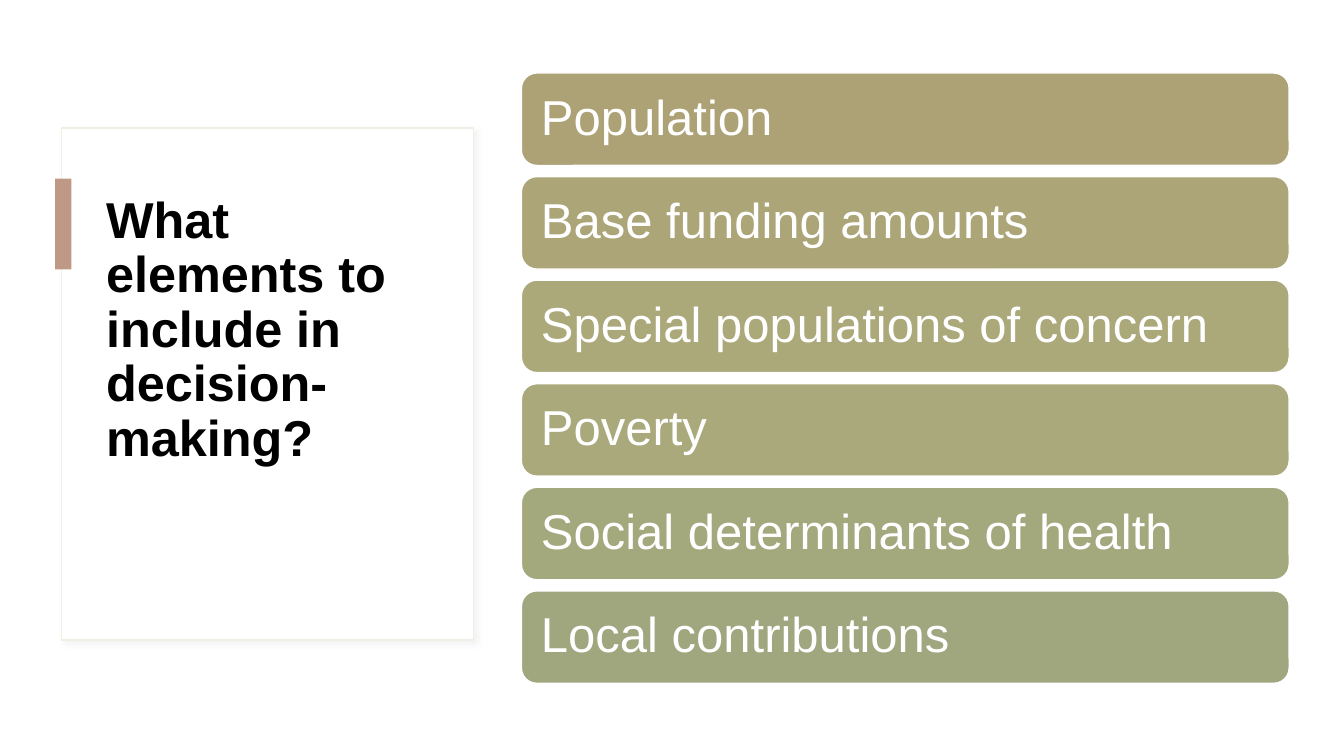
from dataclasses import dataclass
from pptx import Presentation, util as u
from pptx.dml.color import RGBColor
from pptx.enum import shapes, text
from pptx.oxml import parse_xml
from pptx.oxml.ns import nsdecls


@dataclass(frozen=True)
class Theme:
    font: str = "Arial"
    head: int = 36
    body: int = 35
    ink: str = "000000"
    white: str = "FFFFFF"
    edge: str = "EDF0E4"
    shade: str = "D9D9D9"
    accent: str = "BE9A86"
    bars: tuple = ("ADA176", "ACA578", "ABA87A", "A9A97B", "A4A87D", "A0A77F")


class Deck:
    def __init__(self, theme):
        self.theme = theme
        self.prs = Presentation()
        self.prs.slide_width, self.prs.slide_height = u.Cm(33.87), u.Cm(19.05)
        self.slide = self.prs.slides.add_slide(self.prs.slide_layouts[5])

    def box(self, kind, x, y, w, h, fill, line=None):
        shape = self.slide.shapes.add_shape(kind, *map(u.Cm, (x, y, w, h)))
        shape.shadow.inherit = False
        shape.fill.solid()
        shape.fill.fore_color.rgb = RGBColor.from_string(fill)
        if line:
            shape.line.color.rgb = RGBColor.from_string(line)
            shape.line.width = u.Pt(1)
        else:
            shape.line.fill.background()
        return shape

    def card(self, x, y, w, h):
        t = self.theme
        card = self.box(shapes.MSO_SHAPE.RECTANGLE, x, y, w, h, t.white, t.edge)
        # Soft shadow: blur 4 pt, distance 3 pt, towards the lower right
        glow = card._element.spPr.find(
            "{http://schemas.openxmlformats.org/drawingml/2006/main}effectLst")
        glow.append(parse_xml(
            f'<a:outerShdw {nsdecls("a")} blurRad="{u.Pt(4)}" '
            f'dist="{u.Pt(3)}" dir="2700000"><a:srgbClr val="{t.shade}">'
            '<a:alpha val="30000"/></a:srgbClr></a:outerShdw>'))

    def label(self, shape, words, size, color, anchor, bold=False):
        frame = shape.text_frame
        frame.text = words
        frame.word_wrap = True
        frame.auto_size = text.MSO_AUTO_SIZE.NONE
        frame.vertical_anchor = anchor
        para = frame.paragraphs[0]
        para.alignment = text.PP_ALIGN.LEFT
        para.line_spacing = 0.9
        font = para.runs[0].font
        font.name, font.size, font.bold = self.theme.font, u.Pt(size), bold
        font.color.rgb = RGBColor.from_string(color)

    def title(self, words, x, y, w, h):
        title = self.slide.shapes.title
        title.left, title.top, title.width, title.height = map(u.Cm, (x, y, w, h))
        # Bring the title in front of the card
        self.slide.shapes._spTree.append(title._element)
        self.label(title, words, self.theme.head, self.theme.ink,
                   text.MSO_ANCHOR.TOP, bold=True)

    def bar(self, words, x, y, w, h, fill):
        t = self.theme
        bar = self.box(shapes.MSO_SHAPE.ROUNDED_RECTANGLE, x, y, w, h, fill, t.white)
        self.label(bar, words, t.body, t.white, text.MSO_ANCHOR.MIDDLE)
        bar.text_frame.margin_left = bar.text_frame.margin_right = u.Cm(0.38)


def main():
    theme = Theme()
    deck = Deck(theme)

    # Title card with accent tab
    deck.card(1.55, 3.23, 10.39, 12.9)
    deck.title("What elements to include in decision-making?", 2.42, 4.78, 8.61, 9.78)
    deck.box(shapes.MSO_SHAPE.RECTANGLE, 1.39, 4.5, 0.41, 2.29, theme.accent)

    # Evenly stacked bars
    items = ("Population", "Base funding amounts", "Special populations of concern",
             "Poverty", "Social determinants of health", "Local contributions")
    top, pitch = 1.84, 2.61
    for i, (item, fill) in enumerate(zip(items, theme.bars)):
        deck.bar(item, 13.14, top + i * pitch, 19.35, 2.33, fill)

    deck.prs.save("out.pptx")


if __name__ == "__main__":
    main()
